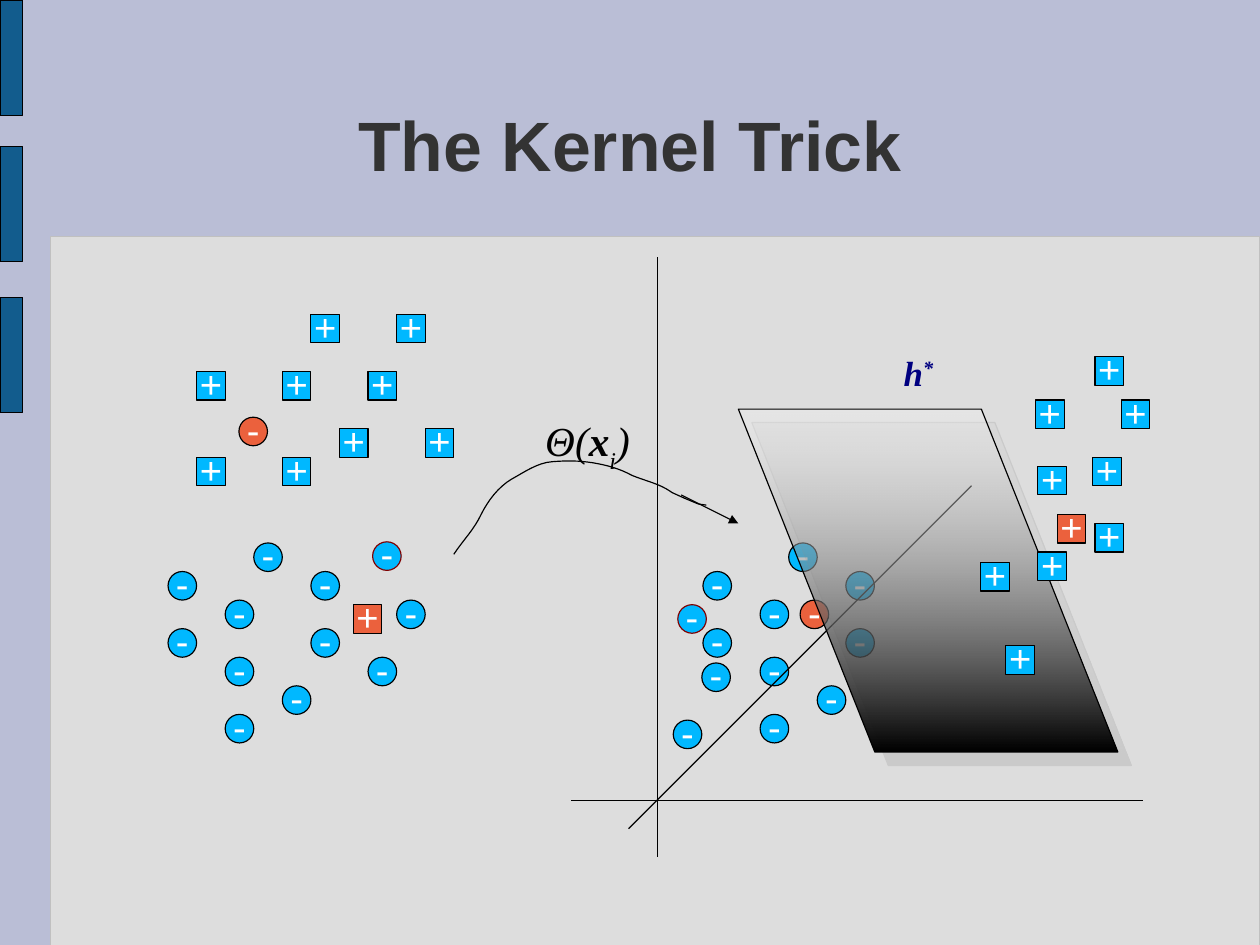
import lxml.etree
import pptx
import pptx.dml.color
import pptx.enum.shapes
import pptx.enum.text
import pptx.oxml
import pptx.oxml.ns
import pptx.util

COLORS = {
    "background": "BABED6", "panel": "DDDDDD", "panel edge": "C0C0C0",
    "bar": "125C8D", "title": "333333", "black": "000000", "white": "FFFFFF",
    "blue": "00B8FF", "orange": "EB613D", "maroon": "800000",
    "navy": "000080", "shadow": "808080",
}
CELL = 0.25  # side of a marker and step of the grids, in inches
SHAPES = pptx.enum.shapes.MSO_SHAPE
MIDDLE = pptx.enum.text.MSO_ANCHOR.MIDDLE
CENTER = pptx.enum.text.PP_ALIGN.CENTER
LEFT = pptx.enum.text.PP_ALIGN.LEFT

# Grid origins in inches, marker places in columns and rows
INPUT_PLUS, INPUT_MINUS = (1.72, 2.75), (1.47, 4.75)
FEATURE_PLUS, FEATURE_MINUS = (9.06, 3), (6.15, 4.75)
SHARED_MINUS = [(4, 5), (0, 1), (3, 0), (2, 2), (5, 1), (5, 3), (0, 3), (2, 4), (2, 6)]
# Each group: sign, fill, edge, origin, cells
MARKERS_BEHIND = [
    ("+", "blue", "black", INPUT_PLUS,
     [(0, 2), (3, 2), (6, 2), (0, 5), (3, 5), (5, 4), (8, 4), (4, 0), (7, 0)]),
    ("-", "blue", "black", INPUT_MINUS, SHARED_MINUS + [(7, 4), (8, 2)]),
    ("-", "blue", "maroon", INPUT_MINUS, [(7.16, -0.04)]),
    ("-", "orange", "black", INPUT_PLUS, [(1.48, 3.6)]),
    ("+", "orange", "black", INPUT_MINUS, [(6.48, 2.16)]),
    ("+", "blue", "black", FEATURE_PLUS,
     [(0.08, 4.32), (2.08, 6.32), (2.08, 0.48), (0, 2), (3, 2), (2, 4)]),
    ("-", "blue", "black", FEATURE_MINUS, SHARED_MINUS + [(-0.04, 4.2), (-1.04, 6.2)]),
    ("-", "blue", "maroon", FEATURE_MINUS, [(-0.88, 2.16)]),
    ("-", "orange", "black", FEATURE_MINUS, [(3.4, 2)]),
    ("+", "orange", "black", FEATURE_PLUS, [(0.76, 6)]),
]
MARKERS_IN_FRONT = [
    ("+", "blue", "black", FEATURE_PLUS, [(-1.04, 10.6), (-1.92, 7.68), (0.08, 7.32)]),
]

# Mapping curve: start, then two control points and an end for each piece
CURVE_START = (3.97, 4.85)
CURVE_PIECES = [
    ((4.05, 4.73), (4.15, 4.63), (4.21, 4.5)),
    ((4.27, 4.38), (4.36, 4.26), (4.48, 4.19)),
    ((4.59, 4.13), (4.7, 4.05), (4.83, 4.04)),
    ((4.95, 4.03), (5.07, 4.03), (5.19, 4.05)),
    ((5.31, 4.07), (5.42, 4.1), (5.53, 4.16)),
    ((5.65, 4.21), (5.77, 4.23), (5.88, 4.31)),
]
CURVE_END = [(5.99, 4.36), (6.11, 4.41), (6.18, 4.42)]


def inches(*values):
    return [pptx.util.Inches(value) for value in values]


def color(name):
    return pptx.dml.color.RGBColor.from_string(COLORS[name])


def set_line(line, name="black"):
    line.color.rgb = color(name)
    line.width = pptx.util.Pt(0.75)


def add_xml(parent, tag, **attributes):
    return lxml.etree.SubElement(parent, pptx.oxml.ns.qn(tag), attributes)


def write(paragraph, text, size=24, font="Arial", fill="white",
          bold=False, italic=False, baseline=0):
    run = paragraph.add_run()
    run.text = text
    run.font.size = pptx.util.Pt(size)
    run.font.name = font
    run.font.color.rgb = color(fill)
    run.font.bold = bold
    run.font.italic = italic
    if baseline:
        run.font._element.set("baseline", str(baseline * 1000))


def prepare_text(shape, align=CENTER, anchor=MIDDLE, wrap=False):
    frame = shape.text_frame
    frame.margin_left = frame.margin_right = frame.margin_top = frame.margin_bottom = 0
    frame.vertical_anchor = anchor
    frame.word_wrap = wrap
    paragraph = frame.paragraphs[0]
    paragraph.alignment = align
    paragraph.line_spacing = 0.93
    return paragraph


def add_block(slide, kind, box, fill, edge="black"):
    shape = slide.shapes.add_shape(kind, *inches(*box))
    shape.shadow.inherit = False
    shape.fill.solid()
    shape.fill.fore_color.rgb = color(fill)
    set_line(shape.line, edge)
    return shape


def add_square_block(slide, box, fill, edge="black"):
    block = add_block(slide, SHAPES.ROUNDED_RECTANGLE, box, fill, edge)
    block.adjustments[0] = 0
    return block


def add_markers(slide, groups):
    for sign, fill, edge, (left, top), cells in groups:
        for column, row in cells:
            box = (left + column * CELL, top + row * CELL, CELL, CELL)
            if sign == "+":
                marker = add_square_block(slide, box, fill, edge)
            else:
                marker = add_block(slide, SHAPES.OVAL, box, fill, edge)
            write(prepare_text(marker), sign)


def add_line(slide, start, end, arrow=False):
    connector = slide.shapes.add_connector(
        pptx.enum.shapes.MSO_CONNECTOR.STRAIGHT, *inches(*start, *end))
    set_line(connector.line)
    if arrow:
        add_xml(connector.line._get_or_add_ln(), "a:tailEnd", type="triangle")
    add_xml(connector._element.spPr, "a:effectLst")


def add_mapping_curve(slide, steps=8):
    points = [CURVE_START]
    for first, second, end in CURVE_PIECES:
        start = points[-1]
        for step in range(1, steps + 1):
            t = step / steps
            points.append(tuple(
                (1 - t) ** 3 * a + 3 * (1 - t) ** 2 * t * b + 3 * (1 - t) * t ** 2 * c + t ** 3 * d
                for a, b, c, d in zip(start, first, second, end)))
    points = [inches(*point) for point in points + CURVE_END]
    builder = slide.shapes.build_freeform(*points[0])
    builder.add_line_segments(points[1:], close=False)
    curve = builder.convert_to_shape()
    curve.fill.background()
    curve.shadow.inherit = False
    set_line(curve.line)


def add_label(slide, box, **layout):
    return prepare_text(slide.shapes.add_textbox(*inches(*box)), **layout)


def add_hyperplane(slide):
    plane = add_block(slide, SHAPES.PARALLELOGRAM, (6.46, 3.58, 3.32, 3), "black")
    plane.adjustments[0] = 0.398
    properties = plane._element.spPr
    properties.xfrm.set("flipV", "1")
    # Black fading to nearly clear white
    plane.fill.gradient()
    plane.fill.gradient_angle = 270
    for stop, position, name in zip(plane.fill.gradient_stops, (0, 1), ("black", "white")):
        stop.position = position
        stop.color.rgb = color(name)
    clear = properties.findall(".//" + pptx.oxml.ns.qn("a:gs"))[-1][0]
    add_xml(clear, "a:alpha", val="25000")
    # Faint offset shadow
    effects = properties.find(pptx.oxml.ns.qn("a:effectLst"))
    shadow = add_xml(effects, "a:outerShdw", blurRad="0", dist=str(pptx.util.Pt(12)),
                     dir="2700000", algn="ctr", rotWithShape="0")
    tint = add_xml(shadow, "a:srgbClr", val=COLORS["shadow"])
    add_xml(tint, "a:alpha", val="20000")


def main():
    presentation = pptx.Presentation()
    presentation.slide_width = pptx.util.Cm(28)
    presentation.slide_height = pptx.util.Cm(21)
    slide = presentation.slides.add_slide(presentation.slide_layouts[5])
    slide.background.fill.solid()
    slide.background.fill.fore_color.rgb = color("background")

    # Title
    title = slide.shapes.title
    title.left, title.top, title.width, title.height = inches(0.81, 0.61, 9.41, 1.38)
    write(prepare_text(title, wrap=True), "The Kernel Trick", size=44, fill="title", bold=True)

    # Panel and side bars
    add_square_block(slide, (0.44, 2.07, 10.58, 6.2), "panel", "panel edge")
    for top in (0, 1.28, 2.6):
        add_square_block(slide, (0, top, 0.2, 1.01), "bar")

    # Samples in both spaces, then the axes
    add_markers(slide, MARKERS_BEHIND)
    add_line(slide, (5.75, 2.25), (5.75, 7.5))
    add_line(slide, (5, 7), (10, 7))
    add_line(slide, (5.5, 7.25), (8.5, 4.25))

    # Mapping arrow and its label
    add_mapping_curve(slide)
    add_line(slide, (5.96, 4.33), (6.46, 4.58), arrow=True)
    mapping = add_label(slide, (4.57, 3.63, 1.18, 0.4), align=LEFT,
                        anchor=pptx.enum.text.MSO_ANCHOR.TOP, wrap=True)
    indents = mapping._element.get_or_add_pPr()
    indents.set("marL", str(pptx.util.Inches(0.51)))
    indents.set("indent", str(pptx.util.Inches(-0.31)))
    for text, bold, baseline in (("Θ(", False, 0), ("x", True, 0), ("i", False, -33), (")", False, 0)):
        write(mapping, text, size=26, font="Times New Roman", fill="black",
              bold=bold, italic=True, baseline=baseline)

    # Separating hyperplane, its label and the samples before it
    optimum = add_label(slide, (7.72, 3.03, 0.63, 0.5))
    for text, baseline in (("h", 0), ("*", 33)):
        write(optimum, text, size=22, font="Times New Roman", fill="navy",
              bold=True, italic=True, baseline=baseline)
    add_hyperplane(slide)
    add_markers(slide, MARKERS_IN_FRONT)

    presentation.save("out.pptx")


if __name__ == "__main__":
    main()
